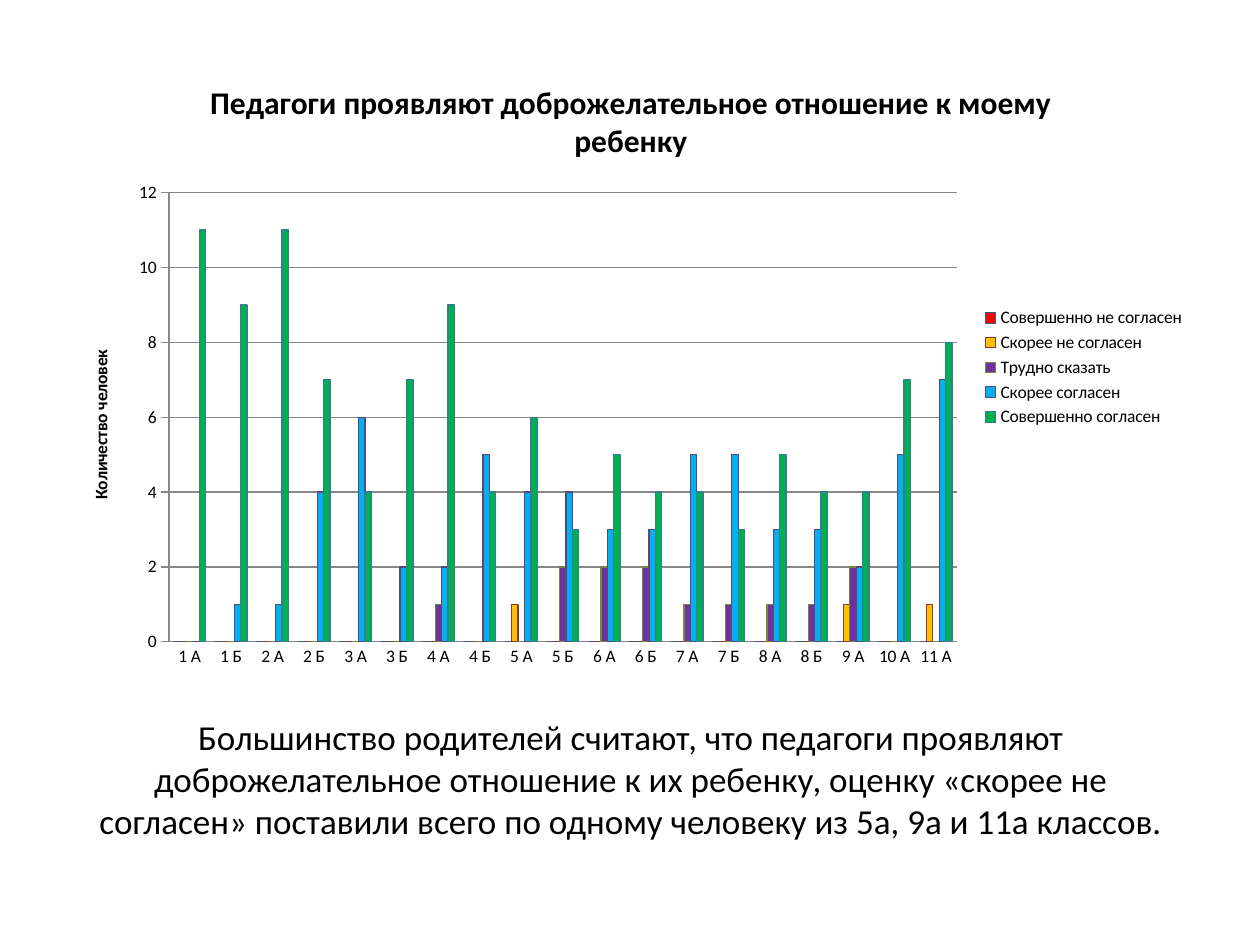
from pptx import Presentation
from pptx.chart.data import CategoryChartData
from pptx.dml.color import RGBColor
from pptx.enum import chart as ch, text
from pptx.util import Pt

FONT = "Calibri"
BLACK = RGBColor(0, 0, 0)
GRAY = RGBColor(0x87, 0x87, 0x87)

# Content
CONCLUSION = ("Большинство родителей считают, что педагоги проявляют "
              "доброжелательное отношение к их ребенку, оценку «скорее не "
              "согласен» поставили всего по одному человеку из 5а, 9а и 11а классов.")
QUESTION = "Педагоги проявляют доброжелательное отношение к моему ребенку"
COUNT_LABEL = "Количество человек"
CLASSES = [f"{grade} {letter}" for grade in range(1, 9) for letter in "АБ"]
CLASSES += ["9 А", "10 А", "11 А"]

# Answer, fill, outline, people per class
ANSWERS = [
    ("Совершенно не согласен", RGBColor(0xFF, 0, 0), RGBColor(0x38, 0x5D, 0x8A),
     [0] * len(CLASSES)),
    ("Скорее не согласен", RGBColor(0xFF, 0xC0, 0), RGBColor(0x8C, 0x38, 0x36),
     [0, 0, 0, 0, 0, 0, 0, 0, 1, 0, 0, 0, 0, 0, 0, 0, 1, 0, 1]),
    ("Трудно сказать", RGBColor(0x70, 0x30, 0xA0), RGBColor(0x71, 0x89, 0x3F),
     [0, 0, 0, 0, 0, 0, 1, 0, 0, 2, 2, 2, 1, 1, 1, 1, 2, 0, 0]),
    ("Скорее согласен", RGBColor(0, 0xB0, 0xF0), RGBColor(0x5C, 0x47, 0x76),
     [0, 1, 1, 4, 6, 2, 2, 5, 4, 4, 3, 3, 5, 5, 3, 3, 2, 5, 7]),
    ("Совершенно согласен", RGBColor(0, 0xB0, 0x50), RGBColor(0x35, 0x7D, 0x91),
     [11, 9, 11, 7, 4, 7, 9, 4, 6, 3, 5, 4, 4, 3, 5, 4, 4, 7, 8]),
]

LEFT, WIDTH = Pt(36.5), Pt(648)


def set_font(font, size, bold=False):
    font.name, font.size, font.bold = FONT, Pt(size), bold
    font.color.rgb = BLACK


def set_heading(owner, words, size):
    frame = owner.text_frame
    frame.text = words
    set_font(frame.paragraphs[0].font, size, bold=True)


prs = Presentation()
prs.slide_width, prs.slide_height = Pt(720), Pt(540)
slide = prs.slides.add_slide(prs.slide_layouts[5])

# Conclusion under the chart
conclusion = slide.shapes.title
conclusion.left, conclusion.top = LEFT, Pt(400)
conclusion.width, conclusion.height = WIDTH, Pt(90)
frame = conclusion.text_frame
frame.text = CONCLUSION
frame.word_wrap = True
frame.auto_size = text.MSO_AUTO_SIZE.NONE
frame.vertical_anchor = text.MSO_ANCHOR.MIDDLE
frame.paragraphs[0].alignment = text.PP_ALIGN.CENTER
set_font(frame.paragraphs[0].font, 20)

# Answers by class
data = CategoryChartData(number_format="General")
data.categories = CLASSES
for answer, _, _, people in ANSWERS:
    data.add_series(answer, people)
survey = slide.shapes.add_chart(ch.XL_CHART_TYPE.COLUMN_CLUSTERED,
                                LEFT, Pt(32), WIDTH, Pt(356), data).chart
set_font(survey.font, 10)
survey.has_title = True
set_heading(survey.chart_title, QUESTION, 18)
survey.chart_title.include_in_layout = False
survey.has_legend = True
survey.legend.position = ch.XL_LEGEND_POSITION.RIGHT
survey.legend.include_in_layout = False

plot = survey.plots[0]
plot.gap_width, plot.overlap = 150, 0
plot.vary_by_categories = False
for series, (_, fill, outline, _) in zip(plot.series, ANSWERS):
    series.invert_if_negative = False
    series.format.fill.solid()
    series.format.fill.fore_color.rgb = fill
    series.format.line.color.rgb = outline
    series.format.line.width = Pt(0.75)

# Axes
classes, counts = survey.category_axis, survey.value_axis
classes.major_tick_mark = ch.XL_TICK_MARK.NONE
counts.major_tick_mark = ch.XL_TICK_MARK.OUTSIDE
counts.minimum_scale, counts.maximum_scale, counts.major_unit = 0, 12, 2
counts.has_major_gridlines = True
set_heading(counts.axis_title, COUNT_LABEL, 10)
for line in (classes.format.line, counts.format.line,
             counts.major_gridlines.format.line):
    line.color.rgb = GRAY
    line.width = Pt(0.75)

prs.save("out.pptx")
